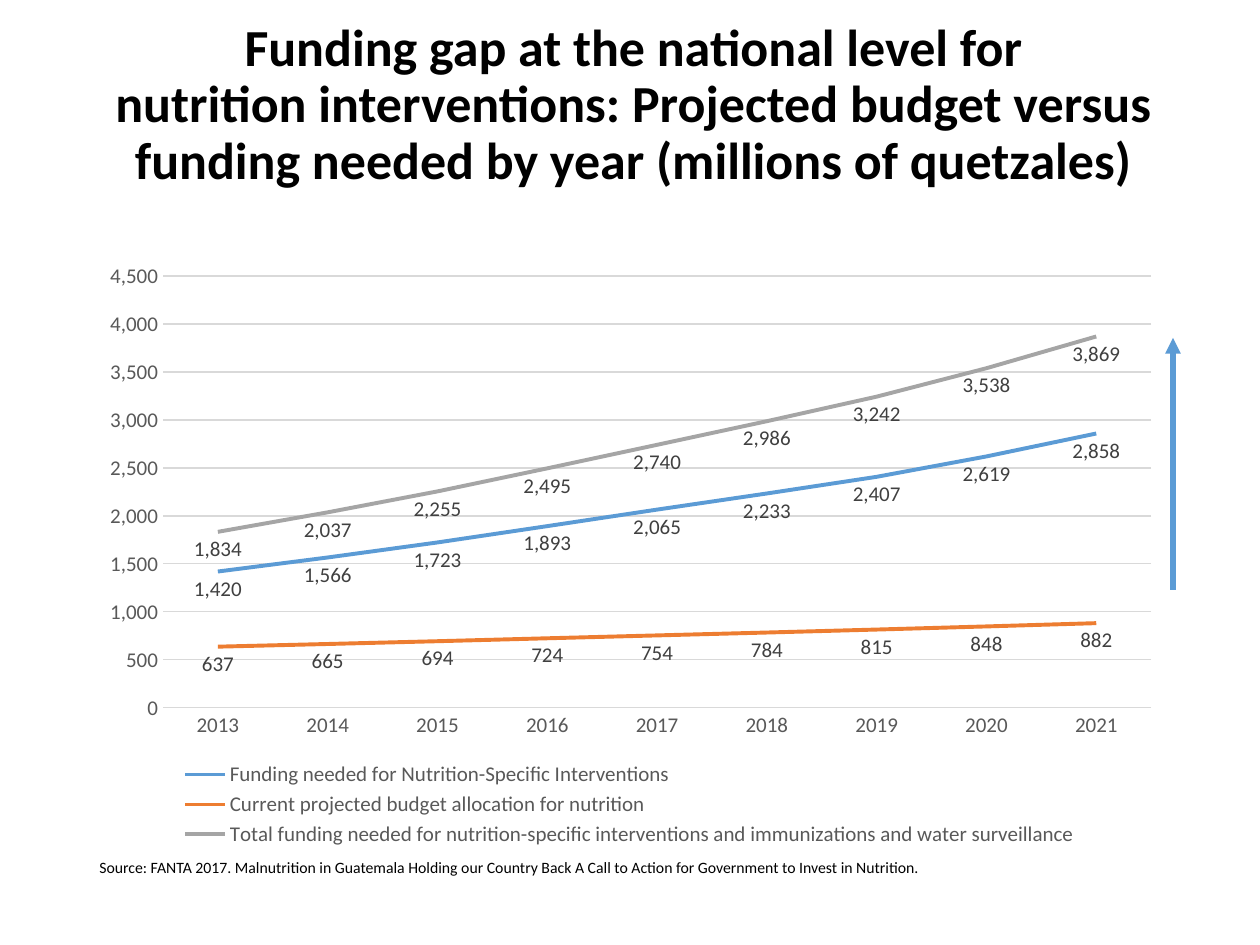
from lxml import etree
from pptx import Presentation
from pptx.chart.data import CategoryChartData
from pptx.dml.color import RGBColor
from pptx.enum.chart import XL_CHART_TYPE, XL_LABEL_POSITION, XL_LEGEND_POSITION, XL_TICK_MARK
from pptx.enum.shapes import MSO_CONNECTOR
from pptx.enum.text import MSO_ANCHOR, PP_ALIGN
from pptx.oxml import parse_xml
from pptx.oxml.ns import nsdecls, qn
from pptx.util import Pt

EMU_PER_PX = 914400 / 126
FONT = "Calibri"
BLUE, ORANGE, GRAY = "5B9BD5", "ED7D31", "A5A5A5"
AXIS_TEXT, LABEL_TEXT, RULE = "595959", "404040", "D9D9D9"

TITLE = (
    "Funding gap at the national level for\v"
    "nutrition interventions: Projected budget versus\v"
    "funding needed by year (millions of quetzales)"
)
SOURCE = (
    "Source: FANTA 2017. Malnutrition in Guatemala Holding our Country Back "
    "A Call to Action for Government to Invest in Nutrition."
)
YEARS = [str(year) for year in range(2013, 2022)]
FUNDING = [
    ("Funding needed for Nutrition-Specific Interventions", BLUE,
     (1420, 1566, 1723, 1893, 2065, 2233, 2407, 2619, 2858)),
    ("Current projected budget allocation for nutrition", ORANGE,
     (637, 665, 694, 724, 754, 784, 815, 848, 882)),
    ("Total funding needed for nutrition-specific interventions "
     "and immunizations and water surveillance", GRAY,
     (1834, 2037, 2255, 2495, 2740, 2986, 3242, 3538, 3869)),
]


def px(length):
    return round(length * EMU_PER_PX)


def color(hex_string):
    return RGBColor.from_string(hex_string)


def format_font(font, size, hex_color, bold=False):
    font.name, font.size, font.bold = FONT, Pt(size), bold
    font.color.rgb = color(hex_color)


def format_line(line, hex_color, width):
    line.color.rgb = color(hex_color)
    line.width = Pt(width)


def write_text(frame, text, size, hex_color="000000", bold=False,
               align=PP_ALIGN.LEFT, anchor=MSO_ANCHOR.TOP, spacing=1.0, wrap=True):
    frame.word_wrap = wrap
    frame.vertical_anchor = anchor
    paragraph = frame.paragraphs[0]
    paragraph.text = text
    paragraph.alignment = align
    paragraph.line_spacing = spacing
    for run in paragraph.runs:
        format_font(run.font, size, hex_color, bold)


def place_title(slide, left, top, width, height):
    title = slide.shapes.title
    title.left, title.top, title.width, title.height = map(px, (left, top, width, height))
    write_text(title.text_frame, TITLE, size=29.7, bold=True, align=PP_ALIGN.CENTER,
               anchor=MSO_ANCHOR.MIDDLE, spacing=0.9)


def fix_plot_area(chart, **fractions):
    """Set the inner plot area as fractions of the chart's box."""
    plot_area = chart._chartSpace.chart.plotArea
    for old_layout in plot_area.findall(qn("c:layout")):
        plot_area.remove(old_layout)
    values = "".join(f'<c:{key} val="{value}"/>' for key, value in fractions.items())
    plot_area.insert(0, parse_xml(
        f'<c:layout {nsdecls("c")}><c:manualLayout><c:layoutTarget val="inner"/>'
        f'<c:xMode val="edge"/><c:yMode val="edge"/>{values}</c:manualLayout></c:layout>'))


def place_funding_chart(slide, left, top, width, height):
    data = CategoryChartData(number_format="#,##0")
    data.categories = YEARS
    for name, _, amounts in FUNDING:
        data.add_series(name, amounts)
    chart = slide.shapes.add_chart(
        XL_CHART_TYPE.LINE, px(left), px(top), px(width), px(height), data).chart
    format_font(chart.font, 10, "000000")
    chart.has_title = False
    chart.has_legend = True
    chart.legend.position = XL_LEGEND_POSITION.BOTTOM
    chart.legend.include_in_layout = False
    format_font(chart.legend.font, 12, AXIS_TEXT)

    years, amounts = chart.category_axis, chart.value_axis
    for axis in (years, amounts):
        axis.major_tick_mark = axis.minor_tick_mark = XL_TICK_MARK.NONE
        format_font(axis.tick_labels.font, 12, AXIS_TEXT)
    format_line(years.format.line, RULE, 0.75)
    amounts.format.line.fill.background()
    amounts.minimum_scale, amounts.maximum_scale, amounts.major_unit = 0, 4500, 500
    amounts.tick_labels.number_format = "#,##0"
    amounts.tick_labels.number_format_is_linked = False
    format_line(amounts.major_gridlines.format.line, RULE, 0.75)

    plot = chart.plots[0]
    plot.vary_by_categories = False
    for series, (_, hex_color, _) in zip(plot.series, FUNDING):
        series.smooth = False
        format_line(series.format.line, hex_color, 2.25)
        labels = series.data_labels
        labels.show_value = True
        labels.position = XL_LABEL_POSITION.BELOW
        format_font(labels.font, 12, LABEL_TEXT)
    fix_plot_area(chart, x=0.07, y=0.04, w=0.91, h=0.72)


def place_gap_arrow(slide, x, bottom, top):
    arrow = slide.shapes.add_connector(
        MSO_CONNECTOR.STRAIGHT, px(x), px(bottom), px(x), px(top))
    format_line(arrow.line, BLUE, 3)
    etree.SubElement(arrow.line._get_or_add_ln(), qn("a:tailEnd"), type="triangle")
    etree.SubElement(arrow._element.spPr, qn("a:effectLst"))


def place_source(slide, left, top, width, height):
    source = slide.shapes.add_textbox(px(left), px(top), px(width), px(height))
    write_text(source.text_frame, SOURCE, size=9, wrap=False)


def main():
    presentation = Presentation()
    presentation.slide_width, presentation.slide_height = px(1260), px(945)
    slide = presentation.slides.add_slide(presentation.slide_layouts[5])
    place_title(slide, 67, 18, 1134, 176)
    place_funding_chart(slide, 87, 252, 1086, 600)
    place_gap_arrow(slide, 1173, bottom=590, top=338)
    place_source(slide, 87, 852, 867, 32)
    presentation.save("out.pptx")


if __name__ == "__main__":
    main()
